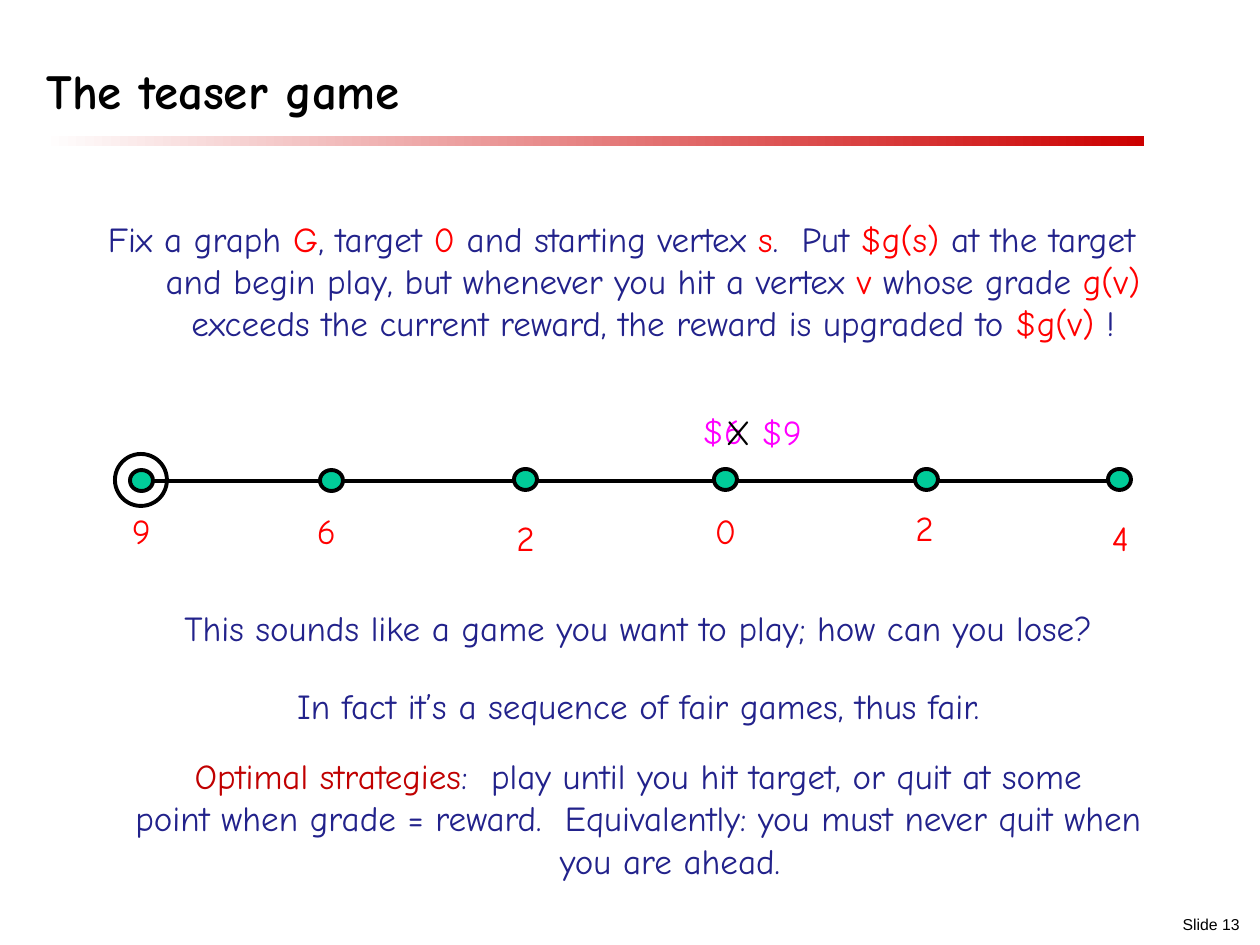
"""Build the slide 'The teaser game'."""
from pptx import Presentation
from pptx.dml.color import RGBColor
from pptx.enum.shapes import MSO_CONNECTOR as Connector, MSO_SHAPE as Shape
from pptx.enum.text import MSO_ANCHOR as Anchor, MSO_AUTO_SIZE as AutoSize, PP_ALIGN as Align
from pptx.oxml.ns import qn
from pptx.util import Emu, Pt
from lxml import etree

SCALE = 914400 / 126
BLACK, NAVY, RED, MAGENTA = "000000", "22228B", "FF0000", "FF00FF"
DARK_RED, GREEN, BAR_RED, WHITE = "C00000", "00CC99", "CC0000", "FFFFFF"
BODY_FONT = "Comic Neue"
hex_color = RGBColor.from_string


def px(*lengths):
    return [Emu(round(length * SCALE)) for length in lengths]


def add_text(box, paragraphs, size=20, font=BODY_FONT, align=Align.CENTER, anchor=Anchor.MIDDLE,
             spacing=1.0, bold=False, hanging=True):
    frame = box.text_frame
    frame.word_wrap = True
    frame.auto_size = AutoSize.NONE
    frame.vertical_anchor = anchor
    for index, runs in enumerate(paragraphs):
        paragraph = frame.add_paragraph() if index else frame.paragraphs[0]
        paragraph.alignment = align
        paragraph.line_spacing = spacing
        if hanging:
            properties = paragraph._p.get_or_add_pPr()
            properties.set("marL", "457200")
            properties.set("indent", "-457200")
        for text, color in runs:
            run = paragraph.add_run()
            run.text = text
            run.font.name = font
            run.font.size = Pt(size)
            run.font.bold = bold
            run.font.color.rgb = hex_color(color)


presentation = Presentation()
presentation.slide_width, presentation.slide_height = px(1260, 945)
slide = presentation.slides.add_slide(presentation.slide_layouts[5])
shapes = slide.shapes

number = shapes.add_textbox(*px(990, 910, 262, 30))
add_text(number, [[("Slide 13", BLACK)]], size=9, font="Arial", align=Align.RIGHT,
         spacing=0.93, hanging=False)

bar = shapes.add_shape(Shape.ROUNDED_RECTANGLE, *px(42, 136, 1102, 10))
bar.adjustments[0] = 0.02
bar.shadow.inherit = False
bar.line.fill.background()
bar.fill.gradient()
bar.fill.gradient_angle = 180
for stop, color in zip(bar.fill.gradient_stops, (BAR_RED, WHITE)):
    stop.color.rgb = hex_color(color)

title = shapes.title
title.left, title.top, title.width, title.height = px(34, 34, 1173, 92)
add_text(title, [[("The teaser game", BLACK)]], size=28, align=Align.LEFT,
         anchor=Anchor.BOTTOM, spacing=0.85, bold=True, hanging=False)

rules = [
    ("Fix a graph ", NAVY), ("G", RED), (", target ", NAVY), ("0", RED),
    (" and starting vertex ", NAVY), ("s", RED), (".  Put ", NAVY), ("$g(s) ", RED),
    ("at the target and begin play, but whenever you hit a vertex ", NAVY), ("v", RED),
    (" whose grade ", NAVY), ("g(v) ", RED),
    ("exceeds the current reward, the reward is upgraded to ", NAVY), ("$g(v) ", RED), ("!", NAVY),
]
strategies = [
    [("Optimal strategies", DARK_RED), (":  play until you hit target, or quit at some", NAVY)],
    [("point when grade = reward.  Equivalently: you must never quit when you are ahead.", NAVY)],
]
text_blocks = [
    ((88, 189, 1067, 183), [rules]),
    ((107, 600, 1063, 55),
     [[("This sounds like a game you want to play; how can you lose?", NAVY)]]),
    ((107, 678, 1063, 55), [[("In fact it’s a sequence of fair games, thus fair.", NAVY)]]),
    ((107, 748, 1063, 140), strategies),
    ((682, 403, 82, 55), [[("$6", MAGENTA)]]),
    ((696, 404, 136, 55), [[("X", BLACK), (" $9", MAGENTA)]]),
]
for place, paragraphs in text_blocks:
    add_text(shapes.add_textbox(*px(*place)), paragraphs)

path_line = shapes.add_connector(Connector.STRAIGHT, *px(135, 481, 1121, 481))
path_line.line.color.rgb = hex_color(BLACK)
path_line.line.width = Pt(2.25)
etree.SubElement(path_line._element.spPr, qn("a:effectLst"))

vertices = [
    ("9", 130, 470, 115, 503), ("6", 320, 470, 300, 503), ("2", 514, 469, 499, 510),
    ("0", 714, 469, 699, 503), ("2", 915, 469, 898, 500), ("4", 1108, 469, 1094, 510),
]
ovals = [((left, top, 23, 21), GREEN) for _, left, top, _, _ in vertices]
ovals.append(((115, 454, 52, 52), None))
for place, color in ovals:
    oval = shapes.add_shape(Shape.OVAL, *px(*place))
    oval.shadow.inherit = False
    oval.line.color.rgb = hex_color(BLACK)
    oval.line.width = Pt(2.25)
    if color:
        oval.fill.solid()
        oval.fill.fore_color.rgb = hex_color(color)
    else:
        oval.fill.background()

for grade, _, _, left, top in vertices:
    add_text(shapes.add_textbox(*px(left, top, 53, 55)), [[(grade, RED)]])

presentation.save("out.pptx")
